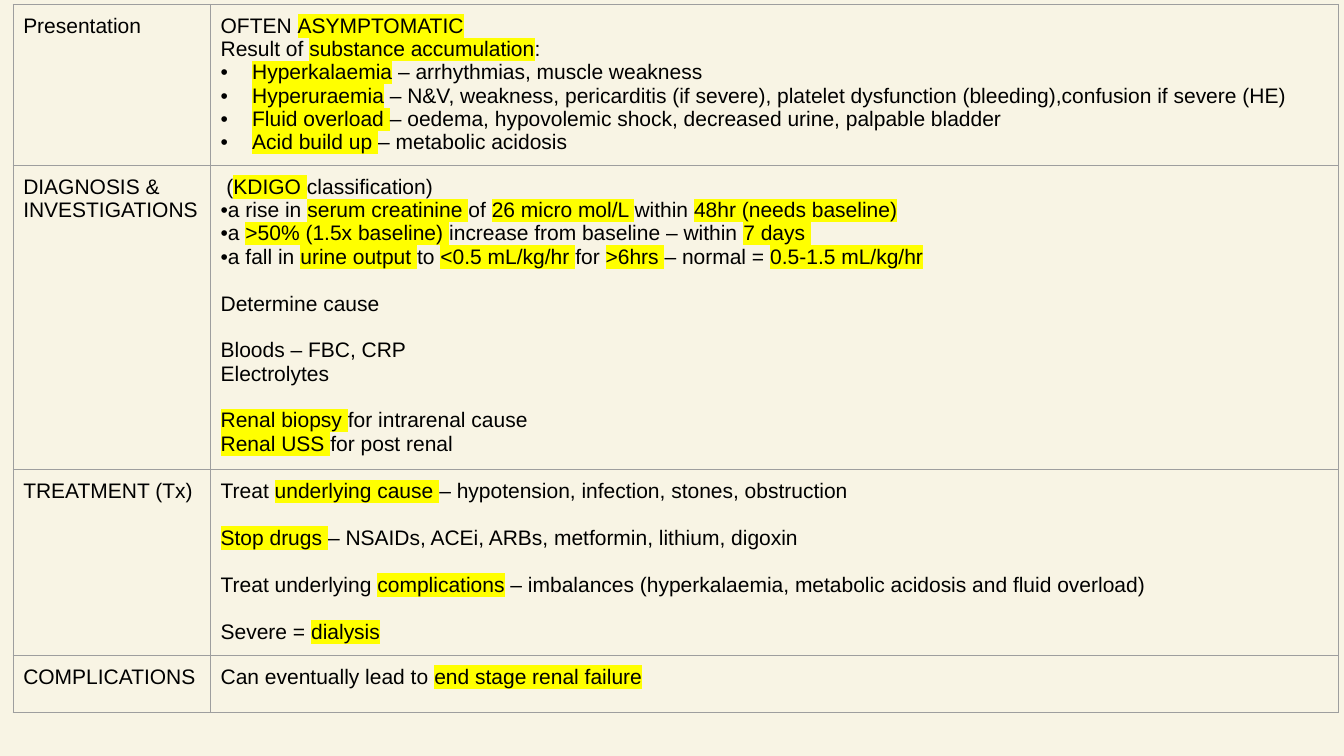
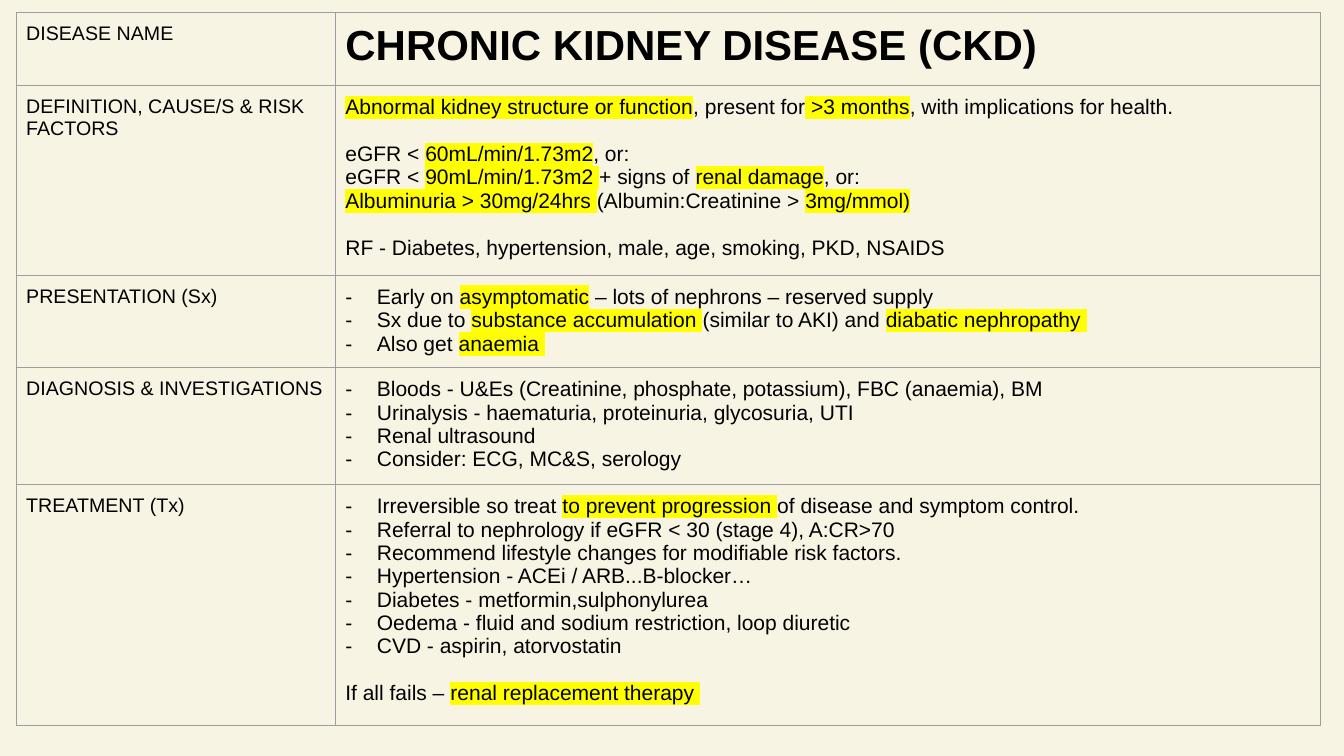
from dataclasses import dataclass

from lxml.etree import SubElement
from pptx import Presentation
from pptx.dml.color import RGBColor
from pptx.oxml.ns import qn
from pptx.util import Pt

COLORS = {"background": "F8F4E4", "text": "000000", "border": "9E9E9E", "highlight": "FFFF00"}
FONT = "Arial"
BODY_SIZE = 15
BLANK_LINE = 16.75
CELL_MARGIN = 7.2
BORDER_WIDTH = 0.75
WIDE_INDENT = 22.5
TIGHT_INDENT = 5.25


@dataclass
class Line:
    """One paragraph; parts between asterisks are highlighted."""
    text: str
    bullet: str = ""
    indent: float = 0
    gap: bool = False
    size: float = BODY_SIZE
    bold: bool = False


def bulleted(bullet, *texts, indent=WIDE_INDENT):
    return [Line(text, bullet, indent) for text in texts]


def spaced(text):
    return Line(text, gap=True)


AKI_ROWS = [
    (115, "Presentation", [
        Line("OFTEN *ASYMPTOMATIC*"),
        Line("Result of *substance accumulation*:"),
        *bulleted(
            "•",
            "*Hyperkalaemia* – arrhythmias, muscle weakness",
            "*Hyperuraemia* – N&V, weakness, pericarditis (if severe), "
            "platelet dysfunction (bleeding),confusion if severe (HE)",
            "*Fluid overload *– oedema, hypovolemic shock, decreased urine, palpable bladder",
            "*Acid build up *– metabolic acidosis"),
    ]),
    (217.5, "DIAGNOSIS & INVESTIGATIONS", [
        Line(" (*KDIGO *classification)"),
        *bulleted(
            "•",
            "a rise in *serum creatinine *of *26 micro mol/L *within *48hr (needs baseline)*",
            "a *>50% (1.5x baseline) *increase from baseline – within *7 days *",
            "a fall in *urine output *to *<0.5 mL/kg/hr *for *>6hrs *– normal = *0.5-1.5 mL/kg/hr*",
            indent=TIGHT_INDENT),
        spaced("Determine cause"),
        spaced("Bloods – FBC, CRP"),
        Line("Electrolytes"),
        spaced("*Renal biopsy *for intrarenal cause"),
        Line("*Renal USS *for post renal"),
    ]),
    (132.5, "TREATMENT (Tx)", [
        Line("Treat *underlying cause *– hypotension, infection, stones, obstruction"),
        spaced("*Stop drugs *– NSAIDs, ACEi, ARBs, metformin, lithium, digoxin"),
        spaced("Treat underlying *complications* – imbalances "
               "(hyperkalaemia, metabolic acidosis and fluid overload)"),
        spaced("Severe = *dialysis*"),
    ]),
    (41, "COMPLICATIONS", [Line("Can eventually lead to *end stage renal failure*")]),
]

CKD_ROWS = [
    (52.5, "DISEASE NAME", [Line("CHRONIC KIDNEY DISEASE (CKD)", size=30, bold=True)]),
    (135.5, "DEFINITION, CAUSE/S & RISK FACTORS", [
        Line("*Abnormal kidney structure or function*, present for* >3 months*, "
             "with implications for health."),
        spaced("eGFR < *60mL/min/1.73m2*, or:"),
        Line("eGFR < *90mL/min/1.73m2 *+ signs of *renal damage*, or:"),
        Line("*Albuminuria > 30mg/24hrs *(Albumin:Creatinine > *3mg/mmol)*"),
        spaced("RF - Diabetes, hypertension, male, age, smoking, PKD, NSAIDS"),
    ]),
    (66, "PRESENTATION (Sx)", bulleted(
        "-",
        "Early on *asymptomatic* – lots of nephrons – reserved supply",
        "Sx due to *substance accumulation *(similar to AKI) and *diabatic nephropathy *",
        "Also get *anaemia *")),
    (83.5, "DIAGNOSIS & INVESTIGATIONS", bulleted(
        "-",
        "Bloods - U&Es (Creatinine, phosphate, potassium), FBC (anaemia), BM",
        "Urinalysis - haematuria, proteinuria, glycosuria, UTI",
        "Renal ultrasound",
        "Consider: ECG, MC&S, serology")),
    (172, "TREATMENT (Tx)", [
        *bulleted(
            "-",
            "Irreversible so treat *to prevent progression *of disease and symptom control.",
            "Referral to nephrology if eGFR < 30 (stage 4), A:CR>70",
            "Recommend lifestyle changes for modifiable risk factors.",
            "Hypertension - ACEi / ARB...B-blocker…",
            "Diabetes - metformin,sulphonylurea",
            "Oedema - fluid and sodium restriction, loop diuretic",
            "CVD - aspirin, atorvostatin"),
        spaced("If all fails – *renal replacement therapy *"),
    ]),
]


def add_color(parent, name):
    SubElement(parent, qn("a:srgbClr"), val=COLORS[name])


def set_bullet(paragraph, line):
    properties = paragraph._p.get_or_add_pPr()
    properties.set("marL", str(Pt(line.indent)))
    properties.set("indent", str(-Pt(line.indent)))
    add_color(SubElement(properties, qn("a:buClr")), "text")
    SubElement(properties, qn("a:buFont"), typeface=FONT)
    SubElement(properties, qn("a:buChar"), char=line.bullet)


def write_line(paragraph, line):
    if line.bullet:
        set_bullet(paragraph, line)
    if line.gap:
        paragraph.space_before = Pt(BLANK_LINE)
    font = paragraph.font
    font.name, font.size, font.bold = FONT, Pt(line.size), line.bold
    font.color.rgb = RGBColor.from_string(COLORS["text"])
    for index, part in enumerate(line.text.split("*")):
        if not part:
            continue
        run = paragraph.add_run()
        run.text = part
        if index % 2:
            add_color(SubElement(run._r.get_or_add_rPr(), qn("a:highlight")), "highlight")


def set_borders(cell):
    properties = cell._tc.get_or_add_tcPr()
    for index, side in enumerate(("lnL", "lnR", "lnT", "lnB")):
        border = SubElement(properties, qn(f"a:{side}"), w=str(Pt(BORDER_WIDTH)))
        add_color(SubElement(border, qn("a:solidFill")), "border")
        properties.insert(index, border)


def fill_cell(cell, lines):
    cell.margin_left = cell.margin_right = Pt(CELL_MARGIN)
    cell.margin_top = cell.margin_bottom = Pt(CELL_MARGIN)
    cell.fill.background()
    set_borders(cell)
    frame = cell.text_frame
    for index, line in enumerate(lines):
        write_line(frame.add_paragraph() if index else frame.paragraphs[0], line)


def add_disease_slide(presentation, left, top, widths, rows, label_size):
    """Add a slide with one table of labels and details."""
    slide = presentation.slides.add_slide(presentation.slide_layouts.get_by_name("Blank"))
    height = sum(row[0] for row in rows)
    table = slide.shapes.add_table(
        len(rows), len(widths), Pt(left), Pt(top), Pt(sum(widths)), Pt(height)).table
    table.first_row = table.horz_banding = False
    for column, width in zip(table.columns, widths):
        column.width = Pt(width)
    for row, (row_height, label, details) in zip(table.rows, rows):
        row.height = Pt(row_height)
        fill_cell(row.cells[0], [Line(label, size=label_size)])
        fill_cell(row.cells[1], details)


def main():
    presentation = Presentation()
    presentation.slide_width, presentation.slide_height = Pt(960), Pt(540)
    background = presentation.slide_master.background.fill
    background.solid()
    background.fore_color.rgb = RGBColor.from_string(COLORS["background"])
    add_disease_slide(presentation, 9.4, 3, (141, 806), AKI_ROWS, label_size=15)
    add_disease_slide(presentation, 11.5, 8.8, (228, 703.5), CKD_ROWS, label_size=14)
    presentation.save("out.pptx")


if __name__ == "__main__":
    main()
